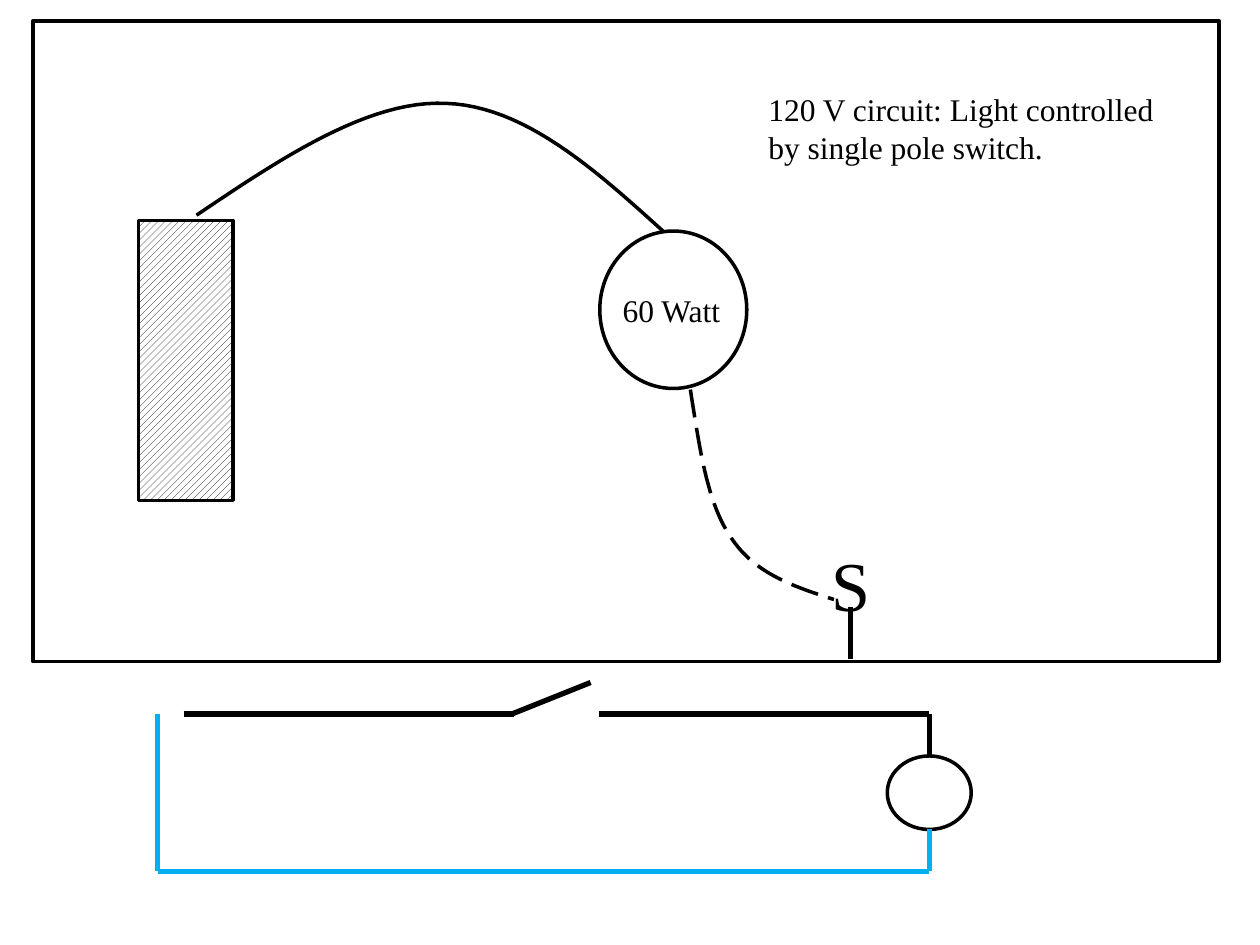
from dataclasses import dataclass

from lxml.etree import SubElement
from pptx import Presentation
from pptx.dml.color import RGBColor
from pptx.enum.dml import MSO_LINE_DASH_STYLE as Dash, MSO_PATTERN_TYPE as Pattern
from pptx.enum.shapes import MSO_CONNECTOR_TYPE as Connector, MSO_SHAPE as Shape
from pptx.enum.text import MSO_AUTO_SIZE as AutoSize
from pptx.oxml.ns import qn
from pptx.util import Inches, Pt

BLACK = RGBColor(0x00, 0x00, 0x00)
WHITE = RGBColor(0xFF, 0xFF, 0xFF)
NEUTRAL_BLUE = RGBColor(0x00, 0xB0, 0xF0)
FONT = "Times New Roman"
CELL = Inches(1) / 24
CURVE_STEPS = 24


@dataclass
class Box:
    left: float
    top: float
    width: float
    height: float

    def point(self, col, row):
        return round((self.left + col) * CELL), round((self.top + row) * CELL)

    def area(self, col, row, cols, rows):
        return *self.point(col, row), round(cols * CELL), round(rows * CELL)


def set_outline(item, color=BLACK, width=2):
    item.line.color.rgb = color
    item.line.width = Pt(width)


def add_symbol(page, kind, area, hatched=False):
    symbol = page.shapes.add_shape(kind, *area)
    symbol.shadow.inherit = False
    if hatched:
        symbol.fill.patterned()
        symbol.fill.pattern = Pattern.WIDE_UPWARD_DIAGONAL
        symbol.fill.fore_color.rgb = BLACK
        symbol.fill.back_color.rgb = WHITE
    else:
        symbol.fill.solid()
        symbol.fill.fore_color.rgb = WHITE
    set_outline(symbol)


def add_wire(page, box, start, end, color=BLACK):
    wire = page.shapes.add_connector(
        Connector.STRAIGHT, *box.point(*start), *box.point(*end)
    )
    set_outline(wire, color, 3)
    SubElement(wire.element.spPr, qn("a:effectLst"))


def add_label(page, area, text, size=18):
    frame = page.shapes.add_textbox(*area).text_frame
    frame.word_wrap = True
    frame.auto_size = AutoSize.SHAPE_TO_FIT_TEXT
    para = frame.paragraphs[0]
    para.text = text
    para.font.name = FONT
    para.font.size = Pt(size)
    para.font.color.rgb = BLACK


def bezier(controls, share):
    rest = 1 - share
    weights = (rest**3, 3 * rest**2 * share, 3 * rest * share**2, share**3)
    return [sum(w * value for w, value in zip(weights, axis)) for axis in zip(*controls)]


def add_cable(page, box, controls, dash=None):
    points = [
        box.point(*bezier(controls[first:first + 4], step / CURVE_STEPS))
        for first in range(0, len(controls) - 1, 3)
        for step in range(1, CURVE_STEPS + 1)
    ]
    builder = page.shapes.build_freeform(*box.point(*controls[0]))
    builder.add_line_segments(points, close=False)
    cable = builder.convert_to_shape()
    cable.shadow.inherit = False
    cable.fill.background()
    set_outline(cable)
    if dash:
        cable.line.dash_style = dash


def add_floor_plan(page, box):
    add_symbol(page, Shape.RECTANGLE, box.area(0, 0, box.width, box.height))
    add_symbol(page, Shape.RECTANGLE, box.area(20.15, 38, 18, 53.3), hatched=True)
    add_symbol(page, Shape.OVAL, box.area(108, 40, 28, 30))
    add_label(page, box.area(149.75, 98, 14, 18.5), "S", 40)
    add_wire(page, box, (155.75, 111.7), (155.75, 121.5))
    add_label(
        page,
        box.area(137.75, 12, 80, 17),
        "120 V circuit: Light controlled by single pole switch.",
    )
    add_label(page, box.area(110, 50.2, 24, 9.6), "60 Watt")

    feed = [(31.2, 37), (47.5, 26), (64.05, 15), (78.7, 15.7),
            (93.6, 16.2), (107, 28.2), (120.25, 40.2)]
    switch_leg = [(125.25, 70.2), (127, 81.2), (128.4, 92), (133.2, 98.7),
                  (137.75, 105.4), (145.2, 107.8), (152.6, 110.2)]
    add_cable(page, box, feed)
    add_cable(page, box, switch_leg, Dash.LONG_DASH)


def add_schematic(page, box):
    right, bottom = box.width, box.height
    hot_row, lamp_top, lamp_bottom = 6, 14, 28
    hot_wires = [
        ((5, hot_row), (68, hot_row)),
        ((67.5, hot_row), (82.5, 0)),
        ((84, hot_row), (right, hot_row)),
        ((right, hot_row), (right, lamp_top)),
    ]
    neutral_wires = [
        ((right, lamp_bottom), (right, bottom)),
        ((0, bottom), (right, bottom)),
        ((0, hot_row), (0, bottom)),
    ]
    lamp_area = box.area(right - 8, lamp_top, 16, lamp_bottom - lamp_top)
    add_symbol(page, Shape.OVAL, lamp_area)
    for color, wires in ((BLACK, hot_wires), (NEUTRAL_BLUE, neutral_wires)):
        for start, end in wires:
            add_wire(page, box, start, end, color)


def main():
    deck = Presentation()
    deck.slide_width, deck.slide_height = Inches(10), Inches(7.5)
    page = deck.slides.add_slide(deck.slide_layouts[6])
    add_floor_plan(page, Box(6.25, 4, 226, 122))
    add_schematic(page, Box(30, 130, 147, 36))
    deck.save("out.pptx")


if __name__ == "__main__":
    main()
